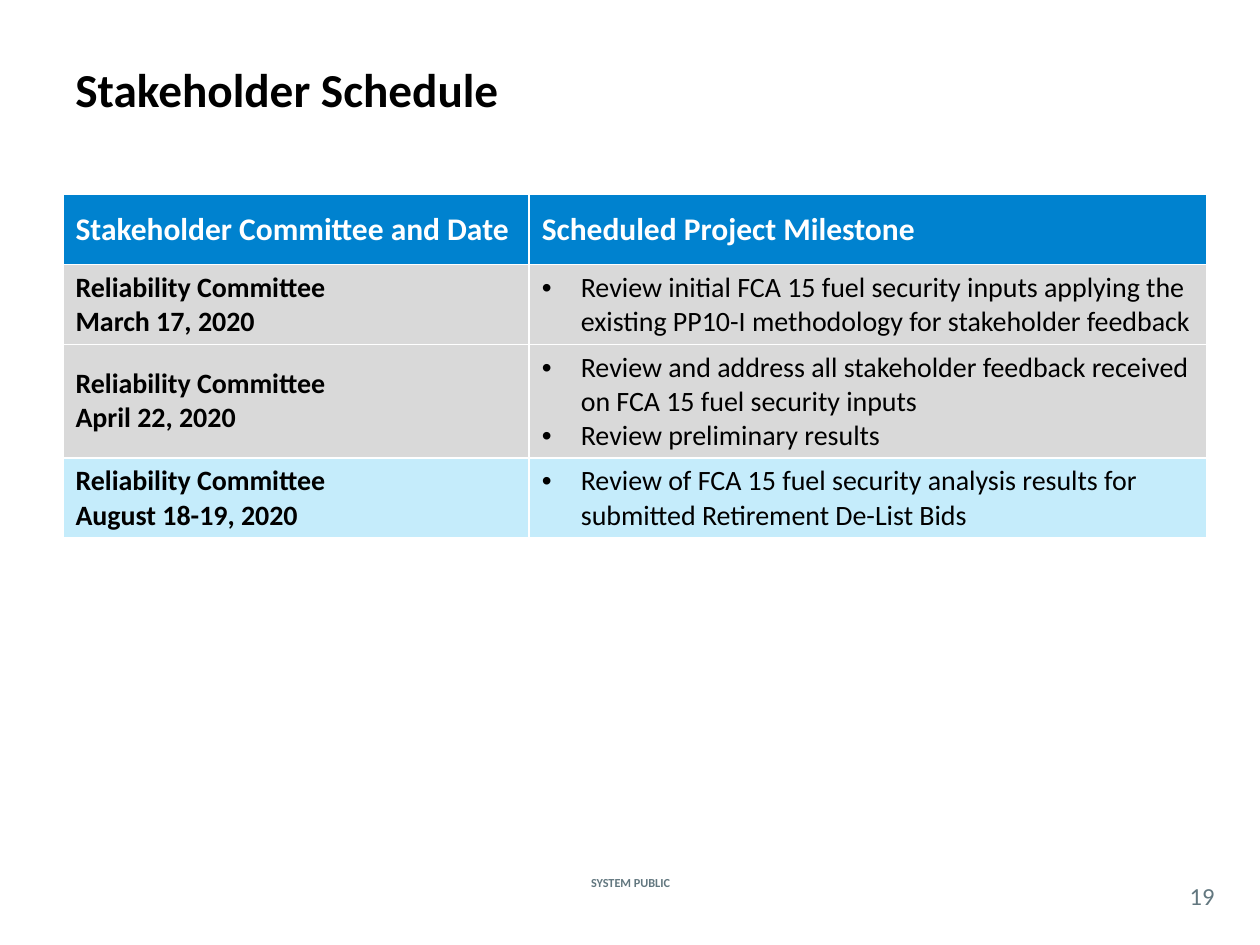
import copy

import pptx
import pptx.dml.color
import pptx.enum.text
import pptx.oxml
import pptx.oxml.ns
import pptx.util

Inches = pptx.util.Inches
ALIGN = pptx.enum.text.PP_ALIGN
MIDDLE = pptx.enum.text.MSO_ANCHOR.MIDDLE

THEME = {
    "font": "Calibri",
    "black": "000000", "white": "FFFFFF", "slate": "62777F",
    "header": "0082CF", "past": "D9D9D9", "next": "C5ECFB",
    "title": 27, "heading": 18, "body": 16, "number": 14, "label": 7,
    "border": 1,
}

TITLE = "Stakeholder Schedule"
LABEL = "SYSTEM PUBLIC"
PAGE_NUMBER = "19"
HEADINGS = ["Stakeholder Committee and Date", "Scheduled Project Milestone"]
MEETINGS = [
    (["Reliability Committee\vMarch 17, 2020"],
     ["Review initial FCA 15 fuel security inputs applying the existing PP10-I "
      "methodology for stakeholder feedback"], "past"),
    (["Reliability Committee", "April 22, 2020"],
     ["Review and address all stakeholder feedback received on FCA 15 fuel security inputs",
      "Review preliminary results"], "past"),
    (["Reliability Committee", "August 18-19, 2020"],
     ["Review of FCA 15 fuel security analysis results for submitted Retirement De-List Bids"],
     "next"),
]
COLUMN_WIDTHS = [3.7, 5.38]
ROW_HEIGHT = 0.56
BULLET_INDENT = 0.31


def rgb(name):
    return pptx.dml.color.RGBColor.from_string(THEME[name])


def element(tag, **attributes):
    item = pptx.oxml.parse_xml(f"<a:{tag} {pptx.oxml.ns.nsdecls('a')}/>")
    for key, value in attributes.items():
        item.set(key, str(value))
    return item


def write(frame, lines, size="body", color="black", bold=False, align=ALIGN.LEFT, bullet=False):
    for index, line in enumerate(lines):
        para = frame.paragraphs[0] if index == 0 else frame.add_paragraph()
        para.text = line
        para.alignment = align
        if bullet:
            properties = para._p.get_or_add_pPr()
            properties.set("marL", str(Inches(BULLET_INDENT)))
            properties.set("indent", str(-Inches(BULLET_INDENT)))
            properties.append(element("buFont", typeface="Arial"))
            properties.append(element("buChar", char="•"))
        for span in para.runs:
            span.font.name = THEME["font"]
            span.font.size = pptx.util.Pt(THEME[size])
            span.font.bold = bold
            span.font.color.rgb = rgb(color)
        for line_break in para._p.findall(pptx.oxml.ns.qn("a:br")):
            line_break.append(copy.deepcopy(para.runs[0]._r.rPr))


def add_text(page, text, bounds, margin=None, **style):
    box = page.shapes.add_textbox(*map(Inches, bounds))
    frame = box.text_frame
    frame.word_wrap = True
    frame.vertical_anchor = MIDDLE
    if margin is not None:
        frame.margin_left = frame.margin_right = Inches(margin)
        frame.margin_top = frame.margin_bottom = Inches(margin)
    write(frame, [text], **style)


def set_borders(cell):
    properties = cell._tc.get_or_add_tcPr()
    for index, side in enumerate(["lnL", "lnR", "lnT", "lnB"]):
        border = element(side, w=pptx.util.Pt(THEME["border"]))
        fill = element("solidFill")
        fill.append(element("srgbClr", val=THEME["white"]))
        border.append(fill)
        properties.insert(index, border)


def fill_cell(cell, lines, background, **style):
    cell.fill.solid()
    cell.fill.fore_color.rgb = rgb(background)
    cell.vertical_anchor = MIDDLE
    set_borders(cell)
    write(cell.text_frame, lines, **style)


def add_schedule(page):
    rows = len(MEETINGS) + 1
    table = page.shapes.add_table(
        rows, len(COLUMN_WIDTHS), Inches(0.5), Inches(1.54),
        Inches(sum(COLUMN_WIDTHS)), Inches(ROW_HEIGHT * rows)).table
    for column, width in zip(table.columns, COLUMN_WIDTHS):
        column.width = Inches(width)
    for index, heading in enumerate(HEADINGS):
        fill_cell(table.cell(0, index), [heading], "header",
                  size="heading", color="white", bold=True)
    for row, (meeting, milestones, background) in enumerate(MEETINGS, start=1):
        fill_cell(table.cell(row, 0), meeting, background, bold=True)
        fill_cell(table.cell(row, 1), milestones, background, bullet=True)


def main():
    deck = pptx.Presentation()
    deck.slide_width, deck.slide_height = Inches(10), Inches(7.5)
    page = deck.slides.add_slide(deck.slide_layouts[6])
    add_text(page, LABEL, (4.27, 6.92, 1.47, 0.17),
             size="label", color="slate", bold=True, align=ALIGN.CENTER)
    add_text(page, TITLE, (0.5, 0.08, 9.17, 1.25), size="title", bold=True)
    add_text(page, PAGE_NUMBER, (9.33, 6.96, 0.42, 0.29), margin=0,
             size="number", color="slate", align=ALIGN.CENTER)
    add_schedule(page)
    deck.save("out.pptx")


if __name__ == "__main__":
    main()
